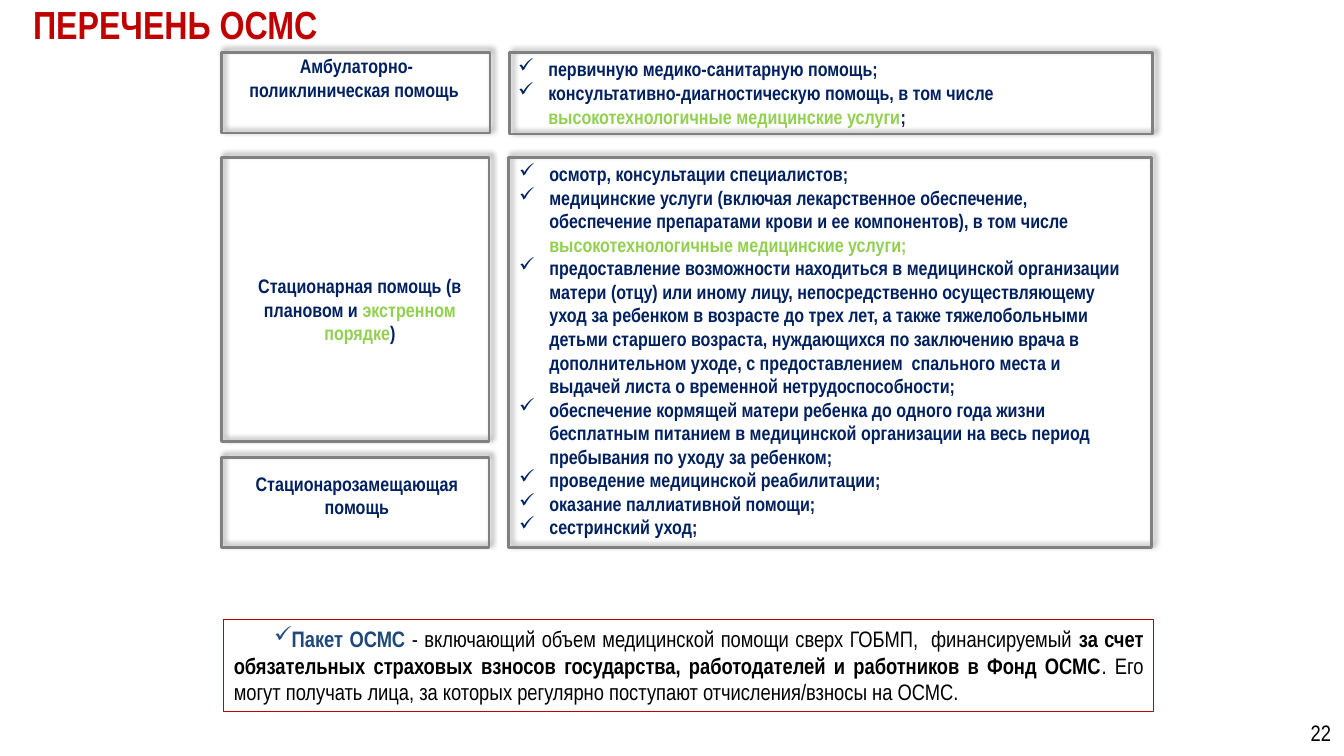
from dataclasses import dataclass

from lxml import etree
from pptx import Presentation
from pptx import util as u
from pptx.dml.color import RGBColor
from pptx.enum import shapes, text
from pptx.oxml import ns

FONT = "Arial Narrow"
NAVY, GREEN, RED, BLUE = "002060", "92D050", "C00000", "1F497D"
GREY, BLACK = "808080", "000000"
LEFT, CENTER = text.PP_ALIGN.LEFT, text.PP_ALIGN.CENTER
RIGHT, JUSTIFY = text.PP_ALIGN.RIGHT, text.PP_ALIGN.JUSTIFY
TOP, MIDDLE = text.MSO_ANCHOR.TOP, text.MSO_ANCHOR.MIDDLE


@dataclass(frozen=True)
class Area:
    left: float
    top: float
    width: float
    height: float

    def lengths(self) -> list:
        return [u.Inches(n) for n in (self.left, self.top, self.width, self.height)]


@dataclass(frozen=True)
class Span:
    words: str
    color: str = NAVY
    bold: bool = True


@dataclass(frozen=True)
class TextBlock:
    area: Area
    paragraphs: list[list[Span]]
    size: int = 14
    align: text.PP_ALIGN = CENTER
    anchor: text.MSO_ANCHOR = TOP
    checked: bool = False
    line_spacing: float = 1.0


FRAMES = [
    Area(2.2, 0.52, 2.66, 0.8),
    Area(5.05, 0.52, 6.38, 0.81),
    Area(2.2, 1.56, 2.65, 2.82),
    Area(2.2, 4.54, 2.65, 0.89),
    Area(5.04, 1.56, 6.38, 3.87),
]

OUTPATIENT_CARE = [
    [Span("первичную медико-санитарную помощь;")],
    [
        Span("консультативно-диагностическую помощь, в том числе "),
        Span("высокотехнологичные медицинские услуги", GREEN),
        Span(";"),
    ],
]

INPATIENT_CARE = [
    [Span("осмотр, консультации специалистов;")],
    [
        Span("медицинские услуги (включая лекарственное обеспечение, обеспечение "
             "препаратами крови и ее компонентов), в том числе "),
        Span("высокотехнологичные медицинские услуги;", GREEN),
    ],
    [Span("предоставление возможности находиться в медицинской организации матери "
          "(отцу) или иному лицу, непосредственно осуществляющему уход за ребенком "
          "в возрасте до трех лет, а также тяжелобольными детьми старшего возраста, "
          "нуждающихся по заключению врача в дополнительном уходе, с "
          "предоставлением  спального места и  выдачей листа о временной "
          "нетрудоспособности;")],
    [Span("обеспечение кормящей матери ребенка до одного года жизни бесплатным "
          "питанием в медицинской организации на весь период пребывания по уходу "
          "за ребенком;")],
    [Span("проведение медицинской реабилитации;")],
    [Span("оказание паллиативной помощи;")],
    [Span("сестринский уход;")],
]

PACKAGE = [
    Span("Пакет ОСМС ", BLUE),
    Span("- включающий объем медицинской помощи сверх ГОБМП,  финансируемый ",
         BLACK, False),
    Span("за счет обязательных страховых взносов государства, работодателей и "
         "работников в Фонд ОСМС", BLACK),
    Span(". Его могут получать лица, за которых регулярно поступают "
         "отчисления/взносы на ОСМС.", BLACK, False),
]

TEXT_BLOCKS = [
    TextBlock(Area(0.23, 0.04, 8.74, 0.48), [[Span("ПЕРЕЧЕНЬ ОСМС", RED)]],
              size=28, align=LEFT, line_spacing=0.8),
    TextBlock(Area(2.29, 0.49, 2.49, 0.57),
              [[Span("Амбулаторно-поликлиническая помощь ")]]),
    TextBlock(Area(2.29, 2.67, 2.56, 0.8),
              [[Span("Стационарная помощь (в плановом и "),
                Span("экстренном порядке", GREEN), Span(")")]]),
    TextBlock(Area(2.24, 4.63, 2.6, 0.56), [[Span("Стационарозамещающая помощь")]]),
    TextBlock(Area(5.04, 0.52, 5.84, 0.8), OUTPATIENT_CARE, align=LEFT, checked=True),
    TextBlock(Area(5.05, 1.56, 6.19, 3.87), INPATIENT_CARE, align=LEFT, checked=True),
    TextBlock(Area(10.3, 7.07, 3, 0.4), [[Span("22", BLACK, False)]],
              size=16, align=RIGHT, anchor=MIDDLE),
]


def rgb(color: str) -> RGBColor:
    return RGBColor.from_string(color)


def add_check_mark(para, margin: float, indent: float) -> None:
    properties = para._p.get_or_add_pPr()
    properties.set("marL", str(u.Inches(margin)))
    properties.set("indent", str(u.Inches(indent)))
    bullet = etree.SubElement(properties, ns.qn("a:buChar"))
    bullet.set("char", "✓")


def add_spans(para, spans: list[Span], size: int) -> None:
    for span in spans:
        run = para.add_run()
        run.text = span.words
        run.font.name = FONT
        run.font.size = u.Pt(size)
        run.font.bold = span.bold
        run.font.color.rgb = rgb(span.color)


def add_outline(page, area: Area, color: str, weight: float):
    """Add an unfilled rectangle without a shadow."""
    box = page.shapes.add_shape(shapes.MSO_SHAPE.RECTANGLE, *area.lengths())
    box.shadow.inherit = False
    box.fill.background()
    box.line.color.rgb = rgb(color)
    box.line.width = u.Pt(weight)
    return box


def add_shadow(box) -> None:
    effects = box._element.spPr.find(ns.qn("a:effectLst"))
    shadow = etree.SubElement(effects, ns.qn("a:outerShdw"), {
        "blurRad": str(u.Pt(4)), "dist": str(u.Pt(3)),
        "dir": str(315 * 60000), "algn": "bl", "rotWithShape": "0"})
    color = etree.SubElement(shadow, ns.qn("a:srgbClr"), val=BLACK)
    etree.SubElement(color, ns.qn("a:alpha"), val="40000")


def add_text_block(page, block: TextBlock) -> None:
    frame = page.shapes.add_textbox(*block.area.lengths()).text_frame
    frame.word_wrap = True
    frame.vertical_anchor = block.anchor
    for index, spans in enumerate(block.paragraphs):
        para = frame.add_paragraph() if index else frame.paragraphs[0]
        para.alignment = block.align
        para.line_spacing = block.line_spacing
        add_spans(para, spans, block.size)
        if block.checked:
            add_check_mark(para, 0.3, -0.3)


def add_package_box(page) -> None:
    frame = add_outline(page, Area(2.22, 6.15, 9.22, 0.91), RED, 0.75).text_frame
    frame.word_wrap = True
    frame.vertical_anchor = TOP
    para = frame.paragraphs[0]
    para.alignment = JUSTIFY
    para.space_after = u.Pt(6)
    add_spans(para, PACKAGE, 16)
    add_check_mark(para, 0, 0.4)


def main() -> None:
    deck = Presentation()
    deck.slide_width, deck.slide_height = u.Inches(13.33), u.Inches(7.5)
    page = deck.slides.add_slide(deck.slide_layouts[6])
    for area in FRAMES:
        add_shadow(add_outline(page, area, GREY, 2))
    for block in TEXT_BLOCKS:
        add_text_block(page, block)
    add_package_box(page)
    deck.save("out.pptx")


if __name__ == "__main__":
    main()
